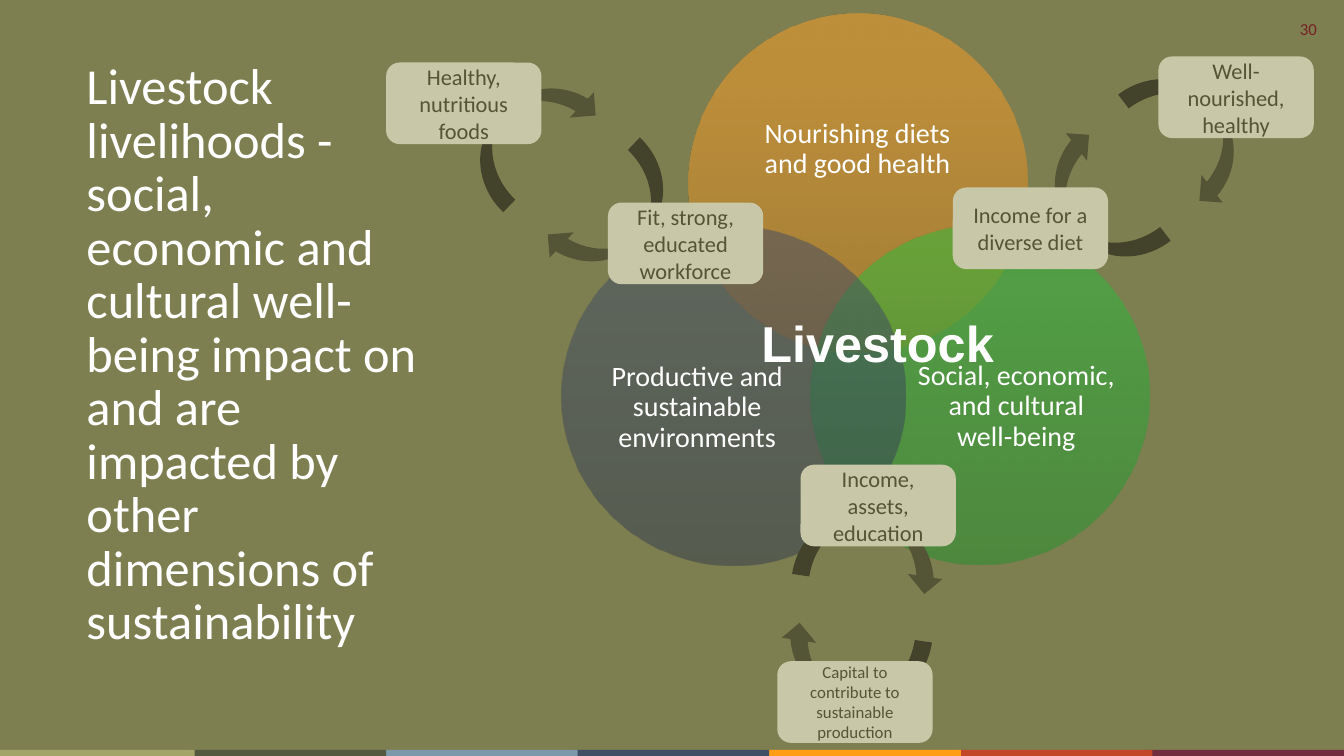
from dataclasses import dataclass

from lxml import etree
from pptx import Presentation
from pptx.dml.color import RGBColor
from pptx.enum.shapes import MSO_SHAPE as Shape
from pptx.enum.text import MSO_ANCHOR as Anchor, PP_ALIGN as Align
from pptx.oxml.ns import qn
from pptx.util import Inches, Pt

WHITE, OLIVE, SAND = "FFFFFF", "545436", "C8C8A9"
BAR_COLORS = ["A3A467", "53593E", "7C98AB", "404E65", "FF9E16", "C34628", "712C3D"]
BAR_STEP, BAR_WIDTH, BAR_HEIGHT = 1.9, 1.93, 0.06
ARROW_SIZE = (1.5, 0.69)
CARD_SIZE = (1.54, 0.81)


@dataclass
class Circle:
    box: tuple[float, float, float, float]
    colors: tuple[str, str, str]
    label: str
    label_box: tuple[float, float, float, float]


@dataclass
class Arrow:
    left: float
    top: float
    rotation: float


@dataclass
class Card:
    left: float
    top: float
    text: str
    size: int = 16


CIRCLES = [
    Circle((6.83, 0.14, 3.36, 3.36), ("C37A1D", "FE9E26", "FF9F26"),
           "Nourishing diets\nand good health", (7.27, 0.73, 2.47, 1.51)),
    Circle((8.04, 2.24, 3.36, 3.36), ("1E902D", "27BB3B", "25BF39"),
           "Social, economic,\nand cultural\nwell-being", (9.07, 3.11, 2.02, 1.85)),
    Circle((5.57, 2.25, 3.41, 3.36), ("2F384D", "3D4964", "3D4966"),
           "Productive and sustainable environments", (5.89, 3.12, 2.05, 1.85)),
]
ARROWS = [
    Arrow(11.07, 0.98, 52.6),
    Arrow(10.13, 1.66, 232.4),
    Arrow(7.9, 5.12, 8.7),
    Arrow(7.7, 6.26, 188.5),
    Arrow(4.51, 0.98, 313.7),
    Arrow(5.33, 1.8, 133.5),
]
CARDS = [
    Card(6.03, 2.01, "Fit, strong, educated workforce"),
    Card(3.83, 0.62, "Healthy, nutritious foods"),
    Card(7.94, 4.61, "Income, assets, education"),
    Card(7.71, 6.56, "Capital to contribute to sustainable production", 12),
    Card(9.45, 1.86, "Income for a diverse diet"),
    Card(11.49, 0.56, "Well-nourished, healthy"),
]


def rgb(color: str) -> RGBColor:
    return RGBColor.from_string(color)


def write(sp, text: str, *, size: float, color: str = WHITE, font: str = "Calibri",
          bold: bool = False, align=Align.CENTER, anchor=Anchor.TOP,
          spacing=None, inset: float | None = None) -> None:
    tf = sp.text_frame
    tf.word_wrap = True
    tf.vertical_anchor = anchor
    if inset is not None:
        tf.margin_left = tf.margin_right = tf.margin_top = tf.margin_bottom = Inches(inset)
    p = tf.paragraphs[0]
    p.text = text
    p.alignment = align
    p.line_spacing = spacing
    for r in p.runs:
        r.font.name = font
        r.font.size = Pt(size)
        r.font.bold = bold
        r.font.color.rgb = rgb(color)


def add_text(s, box: tuple, text: str, **style) -> None:
    write(s.shapes.add_textbox(*map(Inches, box)), text, **style)


def add_shape(s, kind, box: tuple, color: str | None = None):
    sp = s.shapes.add_shape(kind, *map(Inches, box))
    sp.shadow.inherit = False
    sp.line.fill.background()
    if color:
        sp.fill.solid()
        sp.fill.fore_color.rgb = rgb(color)
    return sp


def add_circle(s, circle: Circle) -> None:
    sp = add_shape(s, Shape.OVAL, circle.box)
    sp.fill.gradient()
    sp.fill.gradient_angle = 90
    stops = sp._element.spPr.find(".//" + qn("a:gsLst"))
    for stop in list(stops):
        stops.remove(stop)
    for position, color in zip((0, 80, 100), circle.colors):
        gs = etree.SubElement(stops, qn("a:gs"), pos=str(position * 1000))
        clr = etree.SubElement(gs, qn("a:srgbClr"), val=color)
        etree.SubElement(clr, qn("a:alpha"), val="50000")
    add_text(s, circle.label_box, circle.label, size=20, anchor=Anchor.MIDDLE,
             spacing=0.9, inset=0)


def add_arrow(s, arrow: Arrow) -> None:
    sp = add_shape(s, Shape.CURVED_DOWN_ARROW, (arrow.left, arrow.top, *ARROW_SIZE), OLIVE)
    sp.rotation = arrow.rotation


def add_card(s, card: Card) -> None:
    sp = add_shape(s, Shape.ROUNDED_RECTANGLE, (card.left, card.top, *CARD_SIZE), SAND)
    write(sp, card.text, size=card.size, color=OLIVE, anchor=Anchor.MIDDLE)


def main() -> None:
    prs = Presentation()
    prs.slide_width, prs.slide_height = Inches(13.33), Inches(7.5)
    s = prs.slides.add_slide(prs.slide_layouts[6])
    s.background.fill.solid()
    s.background.fill.fore_color.rgb = rgb("7E7F50")

    add_text(s, (12.46, 0.14, 0.7, 0.3), "30", size=12, color="762123", align=Align.RIGHT)
    for i, color in reversed(list(enumerate(BAR_COLORS))):
        add_shape(s, Shape.RECTANGLE,
                  (i * BAR_STEP, 7.5 - BAR_HEIGHT, BAR_WIDTH, BAR_HEIGHT), color)
    add_text(s, (0.76, 0.56, 3.54, 6.55),
             "Livestock livelihoods - social, economic and cultural well-being impact on "
             "and are impacted by other dimensions of sustainability",
             size=36, align=Align.LEFT, spacing=Pt(38.2))
    for circle in CIRCLES:
        add_circle(s, circle)
    add_text(s, (7.45, 3.2, 2.51, 0.55), "Livestock", size=36, font="Arial", bold=True,
             spacing=Pt(32))
    for arrow in ARROWS:
        add_arrow(s, arrow)
    for card in CARDS:
        add_card(s, card)
    prs.save("out.pptx")


if __name__ == "__main__":
    main()
